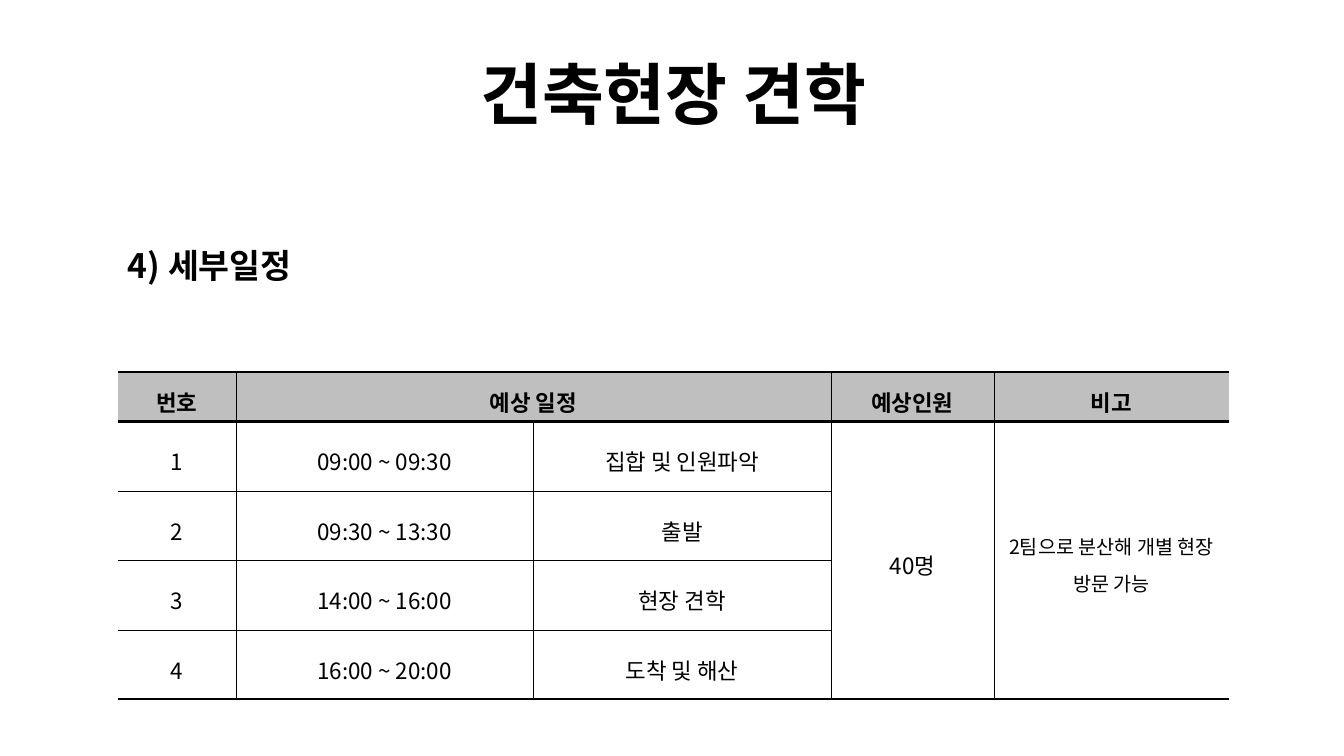
from dataclasses import dataclass

from lxml import etree
from pptx import Presentation, util as u
from pptx.dml.color import RGBColor
from pptx.enum import text
from pptx.oxml import ns


@dataclass(frozen=True)
class Theme:
    """Fonts, colours, type sizes and line weights of the slide."""
    font: str = "Noto Sans CJK KR"
    ink: str = "000000"
    header_fill: str = "BFBFBF"
    title: int = 48
    heading: int = 24
    body: int = 16
    note: int = 14
    thin: float = 0.28
    outer: float = 1.7
    header_rule: float = 1.98


class SlideBuilder:
    """Draws themed elements on the current slide."""

    def __init__(self, slide, theme):
        """Keep the slide and its style."""
        self.slide = slide
        self.theme = theme

    def style(self, paragraph, size, bold, spacing):
        """Set the font and line spacing of a paragraph."""
        font = paragraph.font
        font.name = self.theme.font
        font.size = u.Pt(size)
        font.bold = bold
        font.color.rgb = RGBColor.from_string(self.theme.ink)
        paragraph.line_spacing = spacing
        for run in paragraph.runs:
            properties = run.font._element if hasattr(run.font, "_element") else run._r.get_or_add_rPr()
            east_asian = etree.SubElement(properties, ns.qn("a:ea"))
            east_asian.set("typeface", self.theme.font)

    def text(self, words, box, size, spacing, anchor=text.MSO_ANCHOR.TOP,
             align=text.PP_ALIGN.LEFT, before=0):
        """Add a bold line of text in a wrapped box."""
        shape = self.slide.shapes.add_textbox(*map(u.Inches, box))
        frame = shape.text_frame
        frame.word_wrap = True
        frame.vertical_anchor = anchor
        paragraph = frame.paragraphs[0]
        paragraph.text = words
        paragraph.alignment = align
        paragraph.space_before = u.Pt(before)
        self.style(paragraph, size, True, spacing)

    def border(self, cell, side, width):
        """Draw one cell edge, or clear it when the width is zero."""
        properties = cell._tc.get_or_add_tcPr()
        line = etree.SubElement(properties, ns.qn(f"a:ln{side}"), w=str(u.Pt(width)))
        if not width:
            etree.SubElement(line, ns.qn("a:noFill"))
            return
        fill = etree.SubElement(line, ns.qn("a:solidFill"))
        etree.SubElement(fill, ns.qn("a:srgbClr"), val=self.theme.ink)

    def cell(self, cell, words, header, size):
        """Fill a table cell and set its text."""
        cell.vertical_anchor = text.MSO_ANCHOR.MIDDLE
        cell.margin_left = cell.margin_right = u.Inches(0.02)
        cell.margin_top = cell.margin_bottom = u.Inches(0.02)
        if header:
            cell.fill.solid()
            cell.fill.fore_color.rgb = RGBColor.from_string(self.theme.header_fill)
        else:
            cell.fill.background()
        paragraph = cell.text_frame.paragraphs[0]
        paragraph.text = words
        paragraph.alignment = text.PP_ALIGN.CENTER
        self.style(paragraph, size, header, 1.3)

    def schedule(self, rows, box, widths, heights, merges):
        """Add the schedule table with its merged cells and rules."""
        theme = self.theme
        row_count, column_count = len(heights), len(widths)
        table = self.slide.shapes.add_table(row_count, column_count, *map(u.Inches, box)).table
        table.first_row = table.horz_banding = False
        for column, width in zip(table.columns, widths):
            column.width = u.Inches(width)
        for row, height in zip(table.rows, heights):
            row.height = u.Inches(height)
        for first, last in merges:
            table.cell(*first).merge(table.cell(*last))

        def horizontal(line, column):
            inner = theme.thin if column < 3 else 0
            return {0: theme.outer, 1: theme.header_rule, row_count: theme.outer}.get(line, inner)

        def vertical(line, row):
            hidden = line in (0, column_count) or (row == 0 and line == 2)
            return 0 if hidden else theme.thin

        for r, row in enumerate(rows):
            for c, words in enumerate(row):
                cell = table.cell(r, c)
                self.border(cell, "L", vertical(c, r))
                self.border(cell, "R", vertical(c + cell.span_width, r))
                self.border(cell, "T", horizontal(r, c))
                self.border(cell, "B", horizontal(r + cell.span_height, c))
                is_note = r > 0 and c == column_count - 1
                self.cell(cell, words, r == 0, theme.note if is_note else theme.body)


def main():
    """Build and save the site visit slide."""
    presentation = Presentation()
    presentation.slide_width = u.Inches(13.33)
    presentation.slide_height = u.Inches(7.5)
    slide = presentation.slides.add_slide(presentation.slide_layouts[6])
    theme = Theme()
    builder = SlideBuilder(slide, theme)

    builder.text("건축현장 견학", (1.68, 0.29, 10, 1.09), theme.title, 0.9,
                 text.MSO_ANCHOR.BOTTOM, text.PP_ALIGN.CENTER)
    builder.text("4) 세부일정", (1.17, 2.18, 11.01, 4.7), theme.heading, 1.5, before=10)
    rows = [
        ("번호", "예상 일정", "", "예상인원", "비고"),
        ("1", "09:00 ~ 09:30", "집합 및 인원파악", "40명", "2팀으로 분산해 개별 현장 방문 가능"),
        ("2", "09:30 ~ 13:30", "출발", "", ""),
        ("3", "14:00 ~ 16:00", "현장 견학", "", ""),
        ("4", "16:00 ~ 20:00", "도착 및 해산", "", ""),
    ]
    builder.schedule(rows, (1.17, 3.69, 11.01, 3.25), (1.17, 2.95, 2.95, 1.62, 2.33),
                     (0.49,) + (0.69,) * 4,
                     [((0, 1), (0, 2)), ((1, 3), (4, 3)), ((1, 4), (4, 4))])
    presentation.save("out.pptx")


if __name__ == "__main__":
    main()
